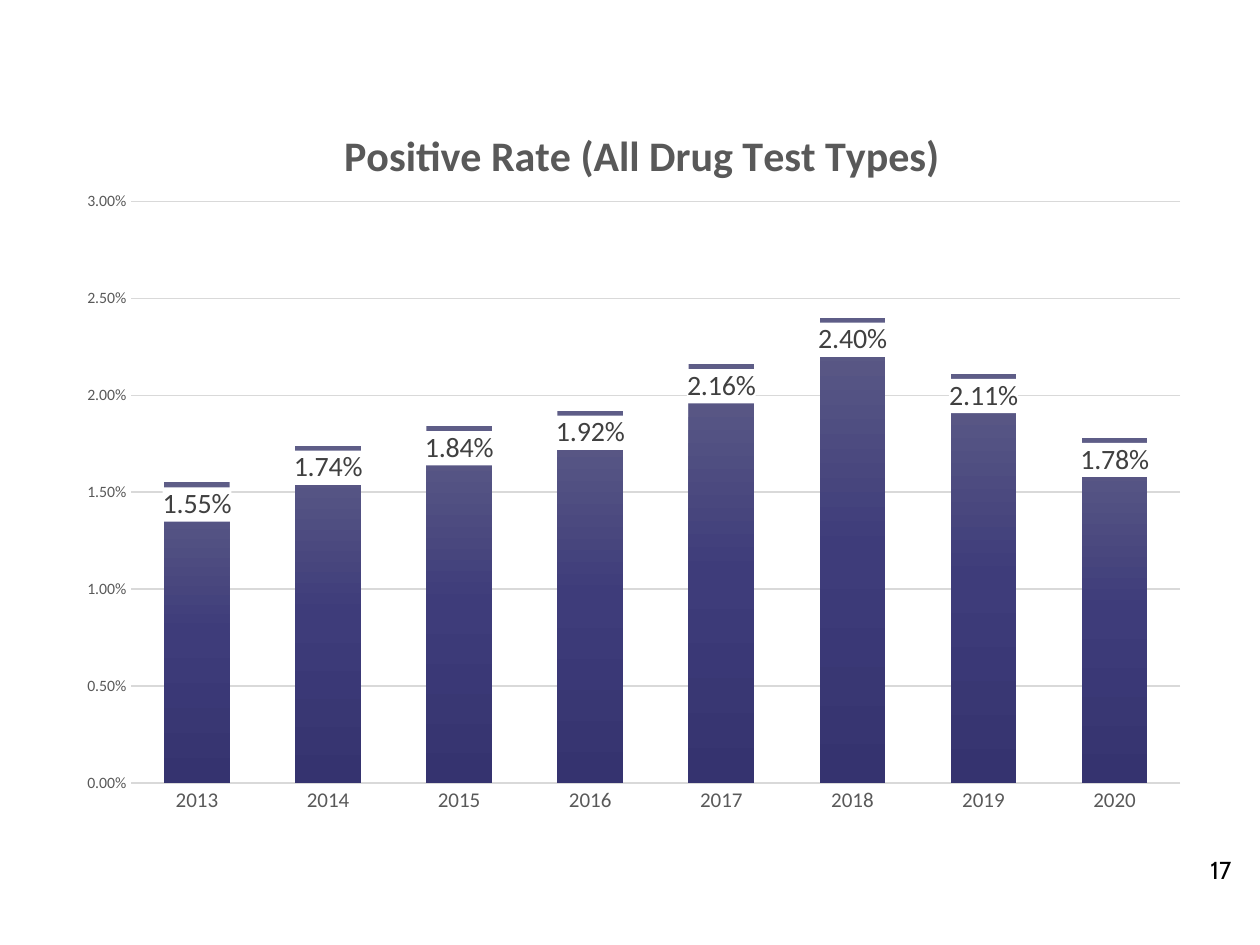
from typing import NamedTuple

from lxml import etree
from pptx import Presentation
from pptx import util as u
from pptx.chart import data as chart_data
from pptx.dml.color import RGBColor
from pptx.enum import chart as chart_enum
from pptx.oxml import ns, parse_xml

EMU_PER_PX = 914400 / 126
COLORS = {
    "black": "000000",
    "white": "FFFFFF",
    "axis": "595959",
    "grid": "D9D9D9",
    "label": "404040",
    "bar_top": "5E5D87",
    "bar_middle": "3E3C7A",
    "bar_bottom": "35336F",
}


class YearRate(NamedTuple):
    year: str
    rate: float


class Box(NamedTuple):
    left: int
    top: int
    width: int
    height: int


RATES = [
    YearRate("2013", 0.0155),
    YearRate("2014", 0.0174),
    YearRate("2015", 0.0184),
    YearRate("2016", 0.0192),
    YearRate("2017", 0.0216),
    YearRate("2018", 0.024),
    YearRate("2019", 0.0211),
    YearRate("2020", 0.0178),
]
CHART_BOX = Box(63, 82, 1140, 746)
PAGE_NUMBER_BOX = Box(1198, 849, 73, 97)


def px(length: int) -> int:
    return u.Emu(round(length * EMU_PER_PX))


def rgb(name: str) -> RGBColor:
    return RGBColor.from_string(COLORS[name])


def set_font(font, size: int, color: str, name: str = "Calibri", bold: bool = False) -> None:
    font.size = u.Pt(size)
    font.name = name
    font.bold = bold
    font.color.rgb = rgb(color)


def manual_layout(inner: bool = False, **fractions: float):
    """Place a chart part by fractions of the chart's width and height."""
    target = '<c:layoutTarget val="inner"/>' if inner else ""
    modes = "".join(f'<c:{key}Mode val="edge"/>' for key in "xy")
    values = "".join(f'<c:{key} val="{value}"/>' for key, value in fractions.items())
    return parse_xml(
        f'<c:layout {ns.nsdecls("c")}><c:manualLayout>{target}{modes}{values}'
        "</c:manualLayout></c:layout>"
    )


def set_layout(parent, layout, index: int) -> None:
    for old in parent.findall(ns.qn("c:layout")):
        parent.remove(old)
    parent.insert(index, layout)


def fill_bars(series) -> None:
    """Fill with a vertical three-stop gradient."""
    properties = series.format.fill._xPr
    gradient = etree.SubElement(properties, ns.qn("a:gradFill"), rotWithShape="1")
    stops = etree.SubElement(gradient, ns.qn("a:gsLst"))
    for position, name in enumerate(("bar_top", "bar_middle", "bar_bottom")):
        stop = etree.SubElement(stops, ns.qn("a:gs"), pos=str(position * 50000))
        etree.SubElement(stop, ns.qn("a:srgbClr"), val=COLORS[name])
    etree.SubElement(gradient, ns.qn("a:lin"), ang="5400000", scaled="0")


def style_labels(labels) -> None:
    labels.show_value = True
    labels.number_format = "0.00%"
    labels.number_format_is_linked = False
    labels.position = chart_enum.XL_LABEL_POSITION.INSIDE_END
    set_font(labels.font, 16, "label")
    background = parse_xml(
        f'<c:spPr {ns.nsdecls("c", "a")}><a:solidFill>'
        f'<a:srgbClr val="{COLORS["white"]}"/></a:solidFill></c:spPr>'
    )
    labels._element.find(ns.qn("c:txPr")).addprevious(background)


def style_axes(chart) -> None:
    for axis, size in ((chart.category_axis, 12), (chart.value_axis, 9)):
        axis.major_tick_mark = chart_enum.XL_TICK_MARK.NONE
        axis.minor_tick_mark = chart_enum.XL_TICK_MARK.NONE
        set_font(axis.tick_labels.font, size, "axis")
    category_line = chart.category_axis.format.line
    category_line.color.rgb = rgb("grid")
    category_line.width = u.Pt(1)
    value_axis = chart.value_axis
    value_axis.minimum_scale, value_axis.maximum_scale = 0, 0.03
    value_axis.major_unit = 0.005
    value_axis.tick_labels.number_format = "0.00%"
    value_axis.tick_labels.number_format_is_linked = False
    value_axis.format.line.fill.background()
    grid_line = value_axis.major_gridlines.format.line
    grid_line.color.rgb = rgb("grid")
    grid_line.width = u.Pt(0.75)


def add_rate_chart(slide, box: Box, rates: list[YearRate]) -> None:
    data = chart_data.CategoryChartData(number_format="0.00%")
    data.categories = [item.year for item in rates]
    data.add_series("Series 1", [item.rate for item in rates])
    chart = slide.shapes.add_chart(
        chart_enum.XL_CHART_TYPE.COLUMN_CLUSTERED, *map(px, box), data
    ).chart
    set_font(chart.font, 10, "black")
    chart.has_legend = False
    chart.has_title = True
    title = chart.chart_title
    title.include_in_layout = False
    paragraph = title.text_frame.paragraphs[0]
    paragraph.text = "Positive Rate (All Drug Test Types)"
    set_font(paragraph.font, 24, "axis", bold=True)
    set_layout(title._element, manual_layout(x=0.24, y=0.05), 1)

    plot = chart.plots[0]
    plot.vary_by_categories = False
    plot.gap_width = 100
    plot.overlap = -24
    fill_bars(plot.series[0])
    style_labels(plot.series[0].data_labels)
    style_axes(chart)
    plot_area = plot._element.getparent()
    set_layout(plot_area, manual_layout(inner=True, x=0.06, y=0.16, w=0.92, h=0.78), 0)


def add_page_number(slide, box: Box, number: str) -> None:
    frame = slide.shapes.add_textbox(*map(px, box)).text_frame
    frame.word_wrap = True
    paragraph = frame.paragraphs[0]
    paragraph.text = number
    set_font(paragraph.font, 14, "black", "Cabin")


def main() -> None:
    presentation = Presentation()
    presentation.slide_width, presentation.slide_height = px(1260), px(945)
    slide = presentation.slides.add_slide(presentation.slide_layouts[6])
    add_page_number(slide, PAGE_NUMBER_BOX, "17")
    add_rate_chart(slide, CHART_BOX, RATES)
    presentation.save("out.pptx")


if __name__ == "__main__":
    main()
